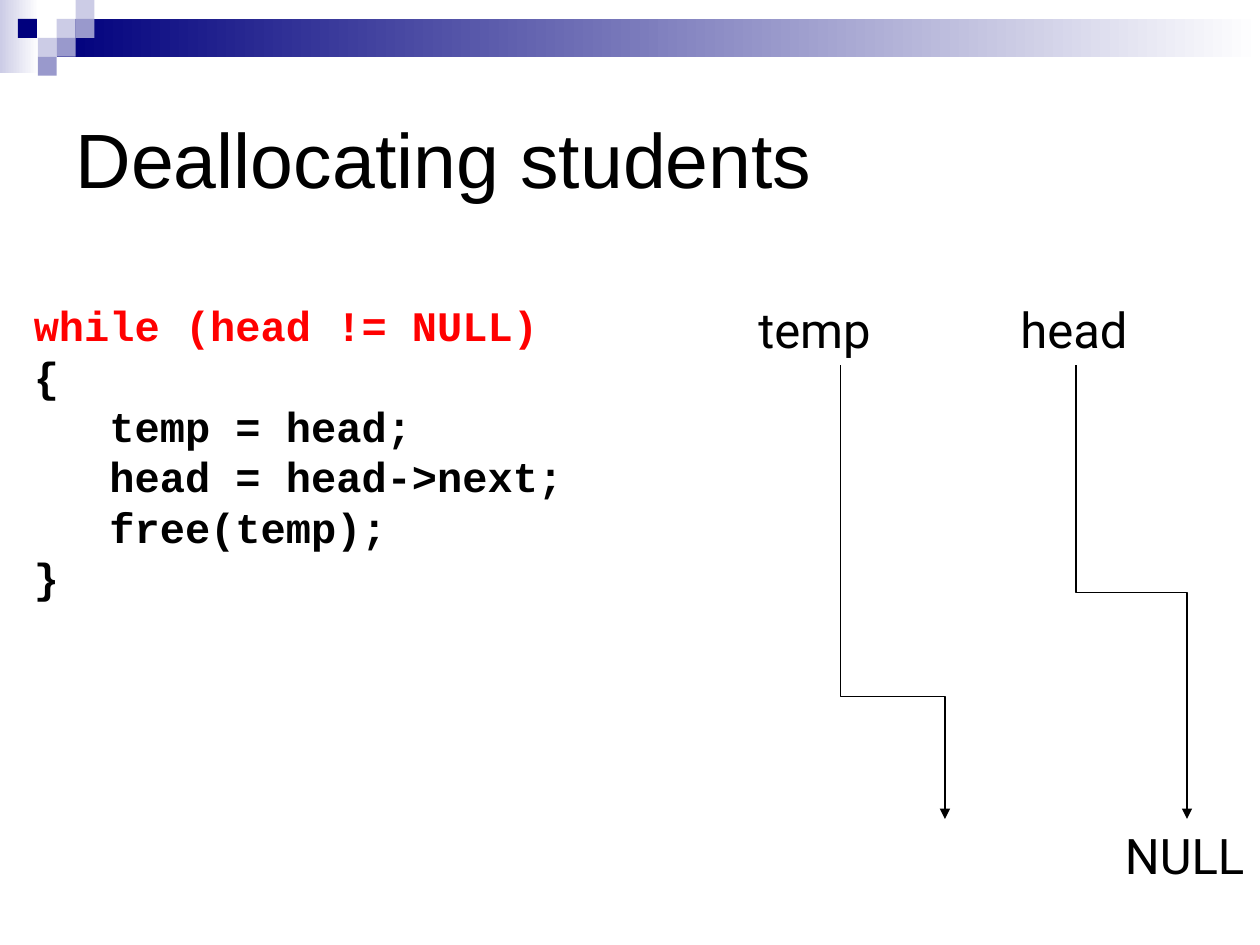
from lxml import etree
from pptx import Presentation, util as u
from pptx.dml.color import RGBColor
from pptx.enum import shapes, text
from pptx.oxml.ns import qn

NAVY, LAVENDER, PERIWINKLE = "00007D", "CCCCE6", "9999CC"
WHITE, BLACK, RED = "FFFFFF", "000000", "FF0000"
CELL = 0.15


def color(value):
    return RGBColor.from_string(value)


def apply(target, values):
    for name, value in values.items():
        setattr(target, name, value)


class SlideBuilder:
    title_font = {"name": "Arial", "size": u.Pt(44), "bold": False}
    label_font = {"name": "Roboto", "size": u.Pt(28)}
    code_font = {"name": "Courier New", "size": u.Pt(24), "bold": True}
    frame_format = {"word_wrap": True, "vertical_anchor": text.MSO_ANCHOR.TOP,
                    "auto_size": text.MSO_AUTO_SIZE.SHAPE_TO_FIT_TEXT}

    def __init__(self, presentation):
        self.slide = presentation.slides.add_slide(presentation.slide_layouts[5])

    def rectangle(self, left, top, width, height, start, end=None):
        shape = self.slide.shapes.add_shape(
            shapes.MSO_SHAPE.RECTANGLE, *map(u.Inches, (left, top, width, height)))
        shape.shadow.inherit = False
        shape.line.fill.background()
        if end is None:
            shape.fill.solid()
            shape.fill.fore_color.rgb = color(start)
            return
        shape.fill.gradient()
        shape.fill.gradient_angle = 0
        for stop, position, value in zip(shape.fill.gradient_stops, (0, 1), (start, end)):
            stop.position = position
            stop.color.rgb = color(value)

    def title(self, wording, left, top, width, height):
        shape = self.slide.shapes.title
        apply(shape, dict(zip(("left", "top", "width", "height"),
                              map(u.Inches, (left, top, width, height)))))
        frame = shape.text_frame
        frame.text = wording
        apply(frame, {"word_wrap": True, "vertical_anchor": text.MSO_ANCHOR.MIDDLE,
                      "auto_size": text.MSO_AUTO_SIZE.NONE})
        paragraph = frame.paragraphs[0]
        paragraph.alignment = text.PP_ALIGN.LEFT
        self.style(paragraph, self.title_font, BLACK)

    def style(self, paragraph, font, value):
        for run in paragraph.runs:
            apply(run.font, font)
            run.font.color.rgb = color(value)

    def text_box(self, lines, left, top, width, height, font):
        box = self.slide.shapes.add_textbox(*map(u.Inches, (left, top, width, height)))
        frame = box.text_frame
        apply(frame, self.frame_format)
        for index, (wording, value) in enumerate(lines):
            paragraph = frame.add_paragraph() if index else frame.paragraphs[0]
            paragraph.text = wording
            self.style(paragraph, font, value)

    def label(self, wording, left, top, width):
        self.text_box([(wording, BLACK)], left, top, width, 0.57, self.label_font)

    def elbow_arrow(self, start_x, start_y, end_x, end_y, bend):
        run, drop = end_x - start_x, end_y - start_y
        left = (start_x + end_x - drop) / 2
        top = (start_y + end_y - run) / 2
        connector = self.slide.shapes.add_connector(
            shapes.MSO_CONNECTOR.ELBOW,
            *map(u.Inches, (left + drop, top, left, top + run)))
        connector.line.width = u.Pt(0.75)
        connector.line.color.rgb = color(BLACK)
        properties = connector._element.spPr
        properties.find(qn("a:xfrm")).set("rot", str(270 * 60000))
        guides = properties.find(qn("a:prstGeom")).get_or_add_avLst()
        etree.SubElement(guides, qn("a:gd"), name="adj1", fmla=f"val {round(bend * 100000)}")
        etree.SubElement(connector.line._get_or_add_ln(), qn("a:tailEnd"), type="triangle")
        etree.SubElement(properties, qn("a:effectLst"))


def main():
    presentation = Presentation()
    presentation.slide_width = u.Inches(10)
    presentation.slide_height = u.Inches(7.5)
    builder = SlideBuilder(presentation)

    builder.rectangle(0, 0, 0.31, 0.58, LAVENDER, WHITE)
    builder.rectangle(0.45, CELL, 9.55, 2 * CELL, NAVY, WHITE)
    mosaic = [(3, 1, LAVENDER), (4, 0, LAVENDER), (4, 1, PERIWINKLE), (2, 2, LAVENDER),
              (0.95, 1, NAVY), (3, 2, PERIWINKLE), (2, 3, PERIWINKLE)]
    for column, row, value in mosaic:
        builder.rectangle(column * CELL, row * CELL, CELL, CELL, value)

    builder.title("Deallocating students", 0.5, 0.5, 9, 1.5)
    for wording, left, top, width in [("NULL", 8.83, 6.5, 1.17), ("head", 8, 2.33, 1.08),
                                      ("temp", 5.92, 2.33, 1.5)]:
        builder.label(wording, left, top, width)
    code = [("while (head != NULL)", RED), ("{\v   temp = head;", BLACK),
            ("   head = head->next;", BLACK), ("   free(temp);", BLACK), ("}", BLACK)]
    builder.text_box(code, 0.17, 2.33, 5, 2.5, builder.code_font)
    for start_x, end_x, bend in [(8.54, 9.42, 0.5), (6.67, 7.5, 0.73)]:
        builder.elbow_arrow(start_x, 2.9, end_x, 6.5, bend)

    presentation.save("out.pptx")


if __name__ == "__main__":
    main()
